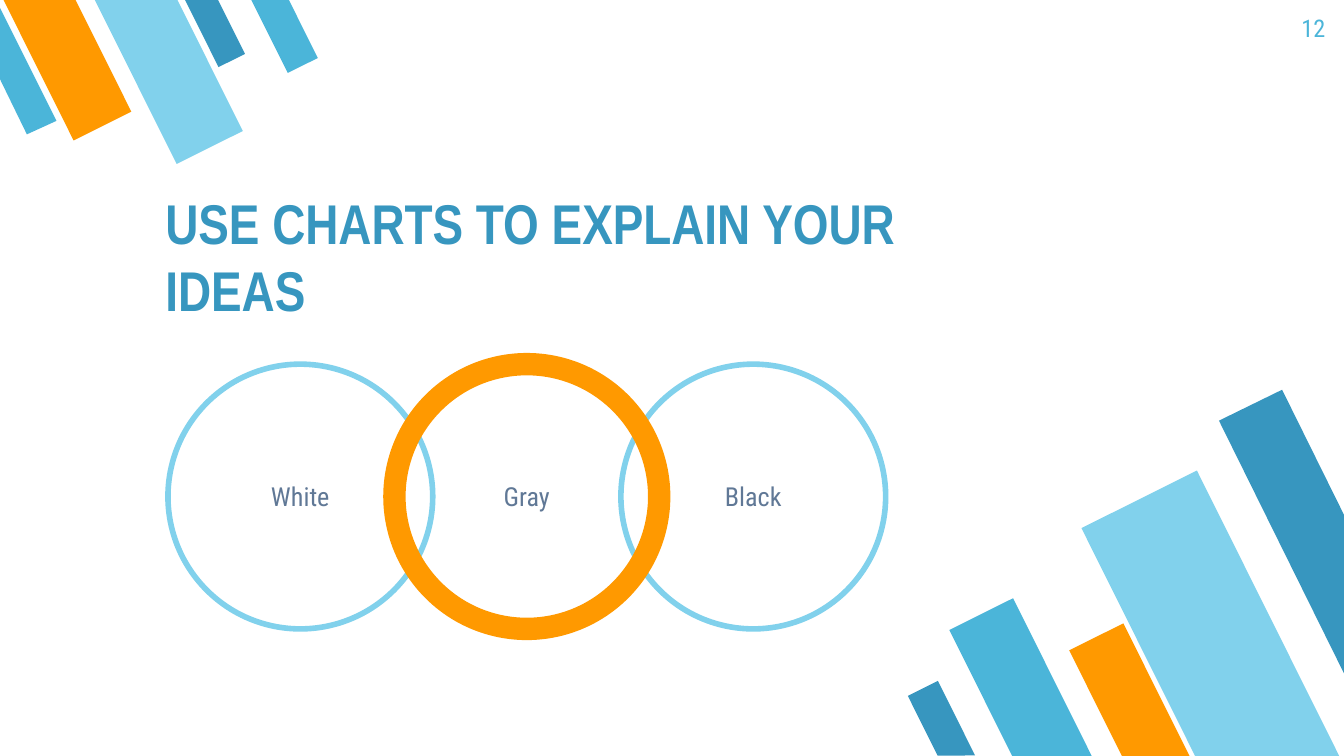
from pptx import Presentation
from pptx import util as u
from pptx.dml.color import RGBColor
from pptx.enum import shapes, text

COLORS = {
    "dark": "3796BF",
    "mid": "4BB5D9",
    "light": "81D1EC",
    "accent": "FF9900",
    "body": "607896",
}
HEADING, BODY = "Arial Narrow", "Roboto Condensed"


class Deck:
    """Holds the style and the current slide."""

    def __init__(self, width, height):
        self.prs = Presentation()
        self.prs.slide_width = u.Inches(width)
        self.prs.slide_height = u.Inches(height)
        self.slide = self.prs.slides.add_slide(self.prs.slide_layouts[5])

    def color(self, name):
        return RGBColor.from_string(COLORS[name])

    def set_words(self, shape, words, size, color, font=BODY, bold=False,
                  align=text.PP_ALIGN.LEFT, anchor=text.MSO_ANCHOR.TOP):
        frame = shape.text_frame
        frame.text = words
        frame.word_wrap = True
        frame.auto_size = text.MSO_AUTO_SIZE.NONE
        frame.vertical_anchor = anchor
        frame.margin_left = frame.margin_right = u.Inches(0.1)
        frame.margin_top = frame.margin_bottom = u.Inches(0.1)
        paragraph = frame.paragraphs[0]
        paragraph.alignment = align
        paragraph.font.name = font
        paragraph.font.size = u.Pt(size)
        paragraph.font.bold = bold
        paragraph.font.color.rgb = self.color(color)

    def paint(self, shape, color):
        shape.shadow.inherit = False
        shape.fill.solid()
        shape.fill.fore_color.rgb = self.color(color)
        shape.line.fill.background()

    def title(self, words, left, top, width, height):
        title = self.slide.shapes.title
        title.left, title.top = u.Inches(left), u.Inches(top)
        title.width, title.height = u.Inches(width), u.Inches(height)
        self.set_words(title, words, 30, "dark", HEADING, True,
                       anchor=text.MSO_ANCHOR.BOTTOM)

    def label(self, words, left, top, width, height):
        box = self.slide.shapes.add_textbox(*map(u.Inches, (left, top, width, height)))
        self.set_words(box, words, 13, "mid", align=text.PP_ALIGN.RIGHT)

    def bar(self, color, rotation, left, top, width, height):
        bar = self.slide.shapes.add_shape(
            shapes.MSO_SHAPE.FLOWCHART_MANUAL_INPUT,
            *map(u.Inches, (left, top, width, height)))
        bar.rotation = rotation
        bar._element.spPr.xfrm.set("flipH", "1")
        self.paint(bar, color)

    def cut_bar(self, color, points):
        start, *rest = [(u.Inches(x), u.Inches(y)) for x, y in points]
        builder = self.slide.shapes.build_freeform(*start)
        builder.add_line_segments(rest, close=True)
        self.paint(builder.convert_to_shape(), color)

    def ring(self, words, color, weight, left, top, size):
        ring = self.slide.shapes.add_shape(
            shapes.MSO_SHAPE.OVAL, *map(u.Inches, (left, top, size, size)))
        ring.shadow.inherit = False
        ring.fill.background()
        ring.line.color.rgb = self.color(color)
        ring.line.width = u.Pt(weight)
        self.set_words(ring, words, 14, "body", align=text.PP_ALIGN.CENTER,
                       anchor=text.MSO_ANCHOR.MIDDLE)


def main():
    deck = Deck(10, 10 * 9 / 16)

    # Bars rising from the bottom right corner
    for color, *place in [
        ("mid", 7.33, 4.5, 0.53, 1.32),
        ("light", 8.53, 3.59, 0.96, 2.39),
        ("accent", 8.18, 4.68, 0.45, 1.11),
        ("dark", 6.88, 5.09, 0.25, 0.62),
    ]:
        deck.bar(color, 153.5, *place)
    deck.cut_bar("dark", [(9.54, 2.9), (9.07, 3.13), (10, 5.01), (10, 3.83)])

    # Bars hanging from the top left corner
    for color, *place in [
        ("dark", 1.49, -0.08, 0.22, 0.56),
        ("accent", 0.26, -0.18, 0.48, 1.18),
        ("light", 0.98, -0.2, 0.55, 1.37),
        ("mid", 1.99, -0.1, 0.25, 0.62),
    ]:
        deck.bar(color, 333.5, *place)
    deck.cut_bar("mid", [(0.2, 1), (0.42, 0.9), (0, 0.06), (0, 0.59)])

    # Title
    deck.title("USE CHARTS TO EXPLAIN YOUR IDEAS", 1.13, 1.76, 6.3, 0.74)

    # Overlapping rings, the middle one in front
    first, last = 1.25, 4.62
    for words, color, weight, left in [
        ("White", "light", 3, first),
        ("Black", "light", 3, last),
        ("Gray", "accent", 12, (first + last) / 2),
    ]:
        deck.ring(words, color, weight, left, 2.71, 1.97)

    # Slide number
    deck.label("12", 9.36, 0, 0.6, 0.43)

    deck.prs.save("out.pptx")


if __name__ == "__main__":
    main()
